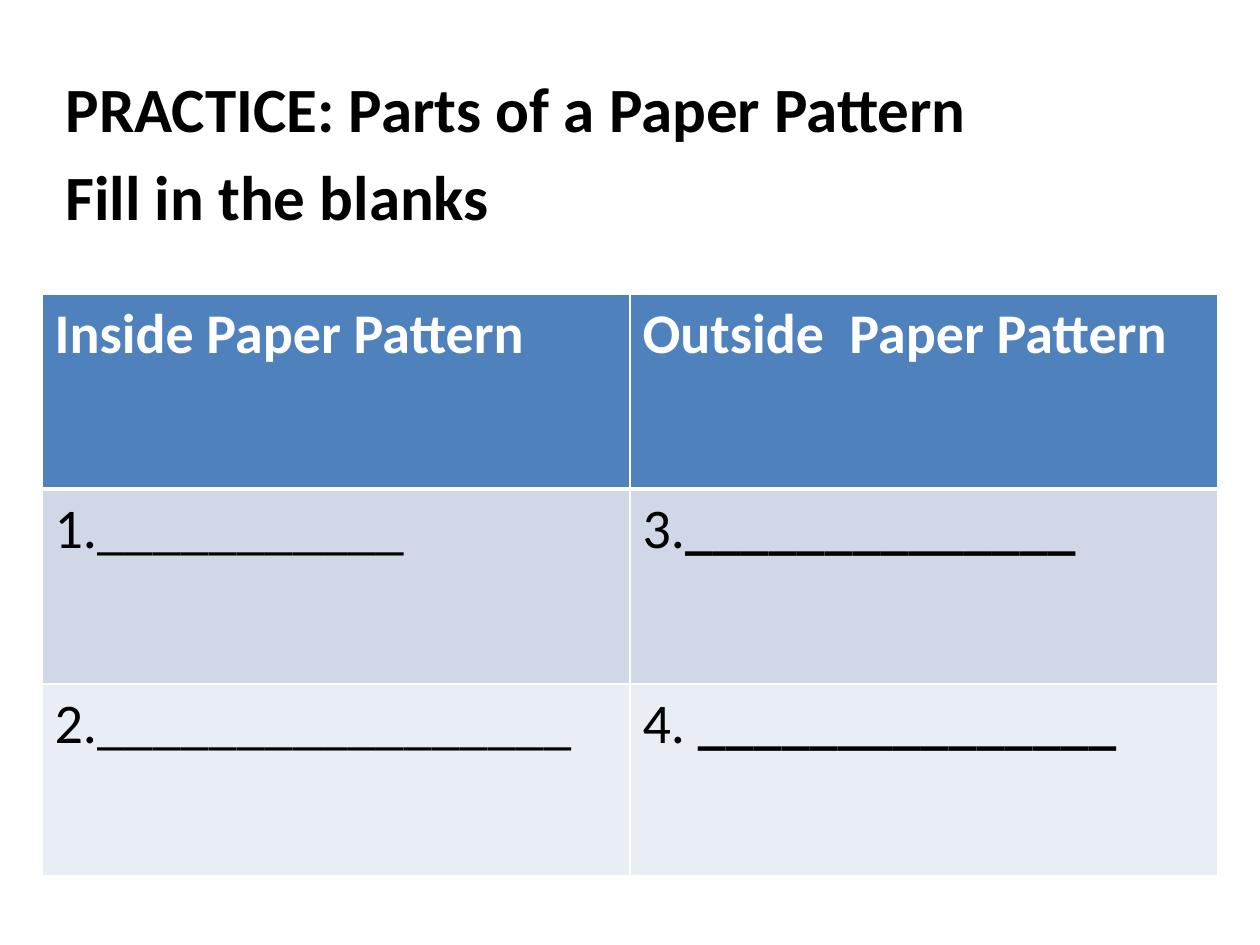
"""Builds the paper pattern practice slide with its fill-in table."""
from lxml import etree
from pptx import Presentation
from pptx.dml.color import RGBColor
from pptx.enum.text import MSO_ANCHOR, MSO_AUTO_SIZE, PP_ALIGN
from pptx.oxml.ns import qn
from pptx.util import Emu, Pt

TOP = MSO_ANCHOR.TOP
NO_FIT = MSO_AUTO_SIZE.NONE
LEFT = PP_ALIGN.LEFT
TITLE_ONLY = 5
FONT = "Calibri"
COLORS = {
    "text": "000000",
    "white": "FFFFFF",
    "header": "4F81BD",
    "odd": "D0D8E8",
    "even": "E9EDF4",
}
TITLE = ["PRACTICE: Parts of a Paper Pattern", "Fill in the blanks"]
ROW_HEIGHTS = [195, 195, 192]
ROW_FILLS = ["header", "odd", "even"]
ROWS = [
    [[("Inside Paper Pattern", True)], [("Outside  Paper Pattern", True)]],
    [[("1." + "_" * 11, False)], [("3.", False), ("_" * 14, True)]],
    [[("2." + "_" * 17, False)], [("4. ", False), ("_" * 15, True)]],
]


def px(length):
    return Emu(round(length * 914400 / 126))


def color(name):
    return RGBColor.from_string(COLORS[name])


class SlideBuilder:
    def __init__(self, deck):
        self.page = deck.slides.add_slide(deck.slide_layouts[TITLE_ONLY])

    def style(self, font, size, color_name):
        font.name = FONT
        font.size = Pt(size)
        font.color.rgb = color(color_name)

    def title(self, lines, left, top, width, height):
        box = self.page.shapes.title
        box.left, box.top, box.width, box.height = map(px, (left, top, width, height))
        frame = box.text_frame
        frame.word_wrap = True
        frame.auto_size = NO_FIT
        frame.vertical_anchor = TOP
        frame.text = "\n".join(lines)
        for index, para in enumerate(frame.paragraphs):
            para.alignment = LEFT
            para.space_before = Pt(7 if index else 0)
            para.font.bold = True
            self.style(para.font, 36, "text")

    def borders(self, cell, top_width, bottom_width):
        properties = cell._tc.get_or_add_tcPr()
        widths = {"a:lnL": 1, "a:lnR": 1, "a:lnT": top_width, "a:lnB": bottom_width}
        for tag, width in widths.items():
            line = etree.SubElement(properties, qn(tag), w=str(Pt(width)))
            fill = etree.SubElement(line, qn("a:solidFill"))
            etree.SubElement(fill, qn("a:srgbClr"), val=COLORS["white"])

    def cell(self, cell, spans, row):
        self.borders(cell, 3 if row == 1 else 1, 3 if row == 0 else 1)
        cell.fill.solid()
        cell.fill.fore_color.rgb = color(ROW_FILLS[row])
        para = cell.text_frame.paragraphs[0]
        self.style(para.font, 32, "text" if row else "white")
        for text, bold in spans:
            span = para.add_run()
            span.text = text
            span.font.bold = bold

    def table(self, rows, left, top, width):
        frame = self.page.shapes.add_table(
            len(rows), len(rows[0]), px(left), px(top), px(width), px(sum(ROW_HEIGHTS)))
        table = frame.table
        table.horz_banding = False
        for row, cells in enumerate(rows):
            table.rows[row].height = px(ROW_HEIGHTS[row])
            for column, spans in enumerate(cells):
                self.cell(table.cell(row, column), spans, row)


def main():
    deck = Presentation()
    deck.slide_width, deck.slide_height = px(1260), px(945)
    builder = SlideBuilder(deck)
    builder.title(TITLE, 53, 63, 1144, 798)
    builder.table(ROWS, 42, 294, 1176)
    deck.save("out.pptx")


if __name__ == "__main__":
    main()
